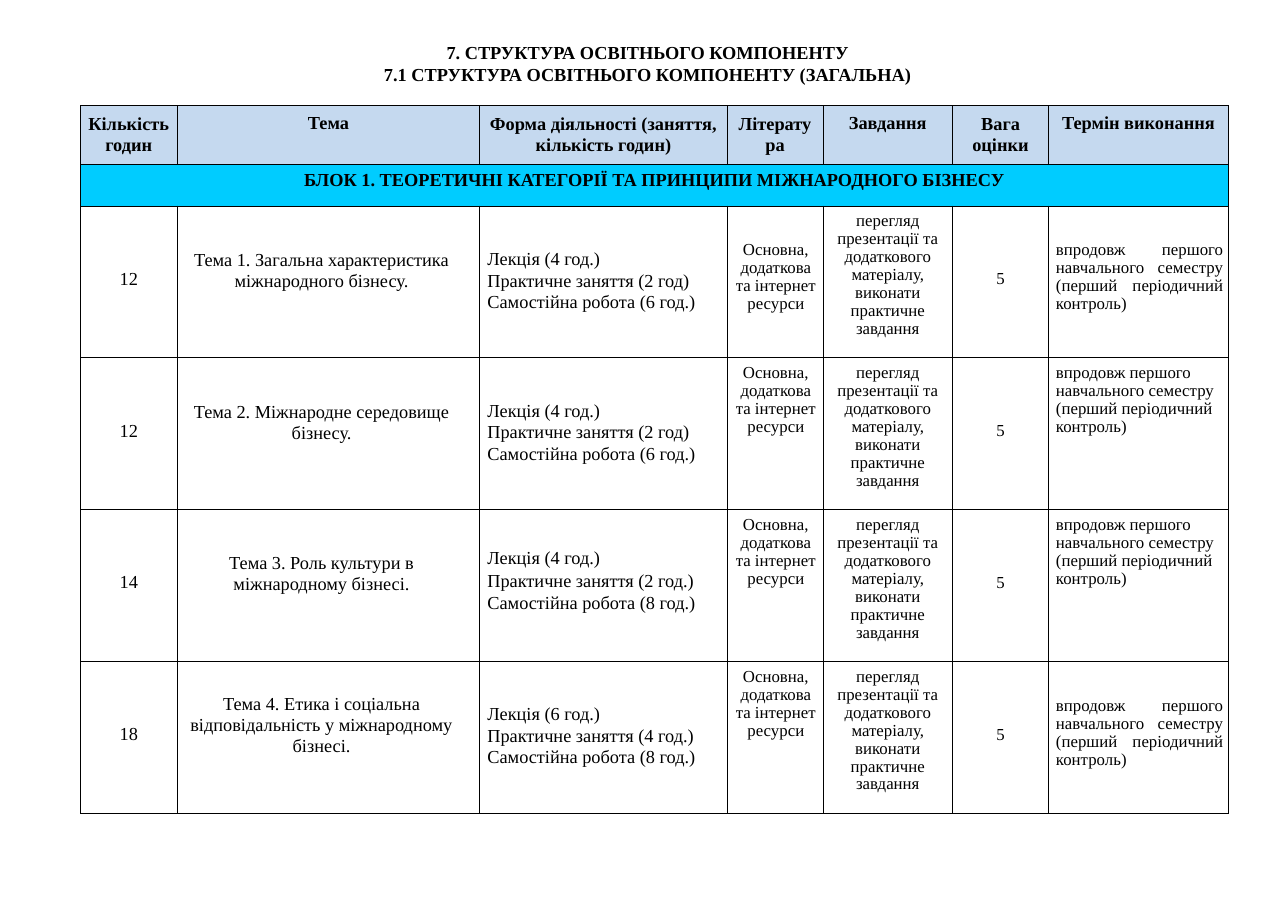
from lxml import etree
from pptx import Presentation
from pptx.dml.color import RGBColor
from pptx.enum.text import MSO_ANCHOR, PP_ALIGN
from pptx.oxml.ns import qn
from pptx.util import Pt

BLACK = RGBColor(0, 0, 0)
WHITE = RGBColor(255, 255, 255)
PALE = RGBColor(0xC5, 0xD9, 0xEF)
CYAN = RGBColor(0x00, 0xCC, 0xFF)
FONT = "Times New Roman"
LEFT, MID, FULL = PP_ALIGN.LEFT, PP_ALIGN.CENTER, PP_ALIGN.JUSTIFY
TOP = MSO_ANCHOR.TOP


def write(frame, text, size=12, bold=False, align=MID, gap=None):
    frame.text = text
    for para in frame.paragraphs:
        para.alignment = align
        para.space_before = Pt(0)
        if gap:
            para.line_spacing = gap
        font = para.font
        font.name, font.size, font.bold = FONT, Pt(size), bold
        font.color.rgb = BLACK


def fill(cell, text, top, left=0, right=0, shade=WHITE, **look):
    cell.margin_top, cell.margin_left = Pt(top), Pt(left)
    cell.margin_right, cell.margin_bottom = Pt(right), Pt(0)
    cell.vertical_anchor = TOP
    write(cell.text_frame, text, **look)
    props = cell._tc.get_or_add_tcPr()
    for side in ("a:lnL", "a:lnR", "a:lnT", "a:lnB"):
        line = etree.SubElement(props, qn(side), w=str(Pt(0.5)))
        paint = etree.SubElement(line, qn("a:solidFill"))
        etree.SubElement(paint, qn("a:srgbClr"), val=str(BLACK))
    cell.fill.solid()
    cell.fill.fore_color.rgb = shade


deck = Presentation()
deck.slide_width, deck.slide_height = Pt(843), Pt(596)
slide = deck.slides.add_slide(deck.slide_layouts[5])

title = slide.shapes.title
title.left, title.top, title.width, title.height = Pt(224), Pt(27.5), Pt(400), Pt(30)
frame = title.text_frame
frame.margin_left = frame.margin_right = frame.margin_top = frame.margin_bottom = 0
frame.vertical_anchor = TOP
frame.word_wrap = True
write(frame, "7. СТРУКТУРА ОСВІТНЬОГО КОМПОНЕНТУ\n"
      "7.1 СТРУКТУРА ОСВІТНЬОГО КОМПОНЕНТУ (ЗАГАЛЬНА)", bold=True, gap=Pt(14.1))

widths = [63.4, 198, 162, 62.6, 85, 62.6, 118.1]
heights = [38.2, 27.4] + [99.3] * 4
shape = slide.shapes.add_table(6, 7, Pt(52.6), Pt(69.1), Pt(sum(widths)), Pt(sum(heights)))
table = shape.table
table.first_row = table.horz_banding = False
for col, width in zip(table.columns, widths):
    col.width = Pt(width)
for row, height in zip(table.rows, heights):
    row.height = Pt(height)

heads = [
    ("Кількість годин", 5), ("Тема", 4.3),
    ("Форма діяльності (заняття, кількість годин)", 5),
    ("Літерату ра", 5), ("Завдання", 4.3), ("Вага оцінки", 5),
    ("Термін виконання", 4.3),
]
for col, (text, top) in enumerate(heads):
    fill(table.cell(0, col), text, top, 4, 4, PALE, bold=True, gap=Pt(13.8))

for col in range(7):
    fill(table.cell(1, col), "", 4.3, shade=CYAN, bold=True)
block = table.cell(1, 0)
block.merge(table.cell(1, 6))
write(block.text_frame,
      "БЛОК 1. ТЕОРЕТИЧНІ КАТЕГОРІЇ ТА ПРИНЦИПИ МІЖНАРОДНОГО БІЗНЕСУ", bold=True)

source = "Основна, додаткова та інтернет ресурси"
task = "перегляд презентації та додаткового матеріалу, виконати практичне завдання"
term = "впродовж першого навчального семестру (перший періодичний контроль)"
form = "Лекція ({} год.)\nПрактичне заняття ({})\nСамостійна робота ({} год.)"
HIGH, LOW = 4.3, 23.4
topics = [
    ("12", "Тема 1. Загальна характеристика міжнародного бізнесу.", 28.4,
     (4, "2 год", 6), 27.6, 14.1, LOW, LOW, FULL),
    ("12", "Тема 2. Міжнародне середовище бізнесу.", 28.4,
     (4, "2 год", 6), 27.6, 14.1, HIGH, HIGH, LEFT),
    ("14", "Тема 3. Роль культури в міжнародному бізнесі.", 28.2,
     (4, "2 год.", 8), 24, 14.8, HIGH, HIGH, LEFT),
    ("18", "Тема 4. Етика і соціальна відповідальність у міжнародному бізнесі.", 21.1,
     (6, "4 год.", 8), 27.6, 14.1, HIGH, LOW, FULL),
]
for row, topic in enumerate(topics, 2):
    hours, theme, drop, split, start, pitch, lit, due, align = topic
    cells = [table.cell(row, col) for col in range(7)]
    fill(cells[0], hours, 41.3)
    fill(cells[1], theme, drop, right=9, gap=Pt(13.8))
    fill(cells[2], form.format(*split), start, 5, align=LEFT, gap=Pt(pitch))
    fill(cells[3], source, lit, 5, 4, size=11, gap=0.96)
    fill(cells[4], task, HIGH, 8, 8, size=11, gap=0.96)
    fill(cells[5], "5", 41.9, size=11)
    fill(cells[6], term, due, 5, 3.6, size=11, align=align, gap=0.96)

deck.save("out.pptx")
